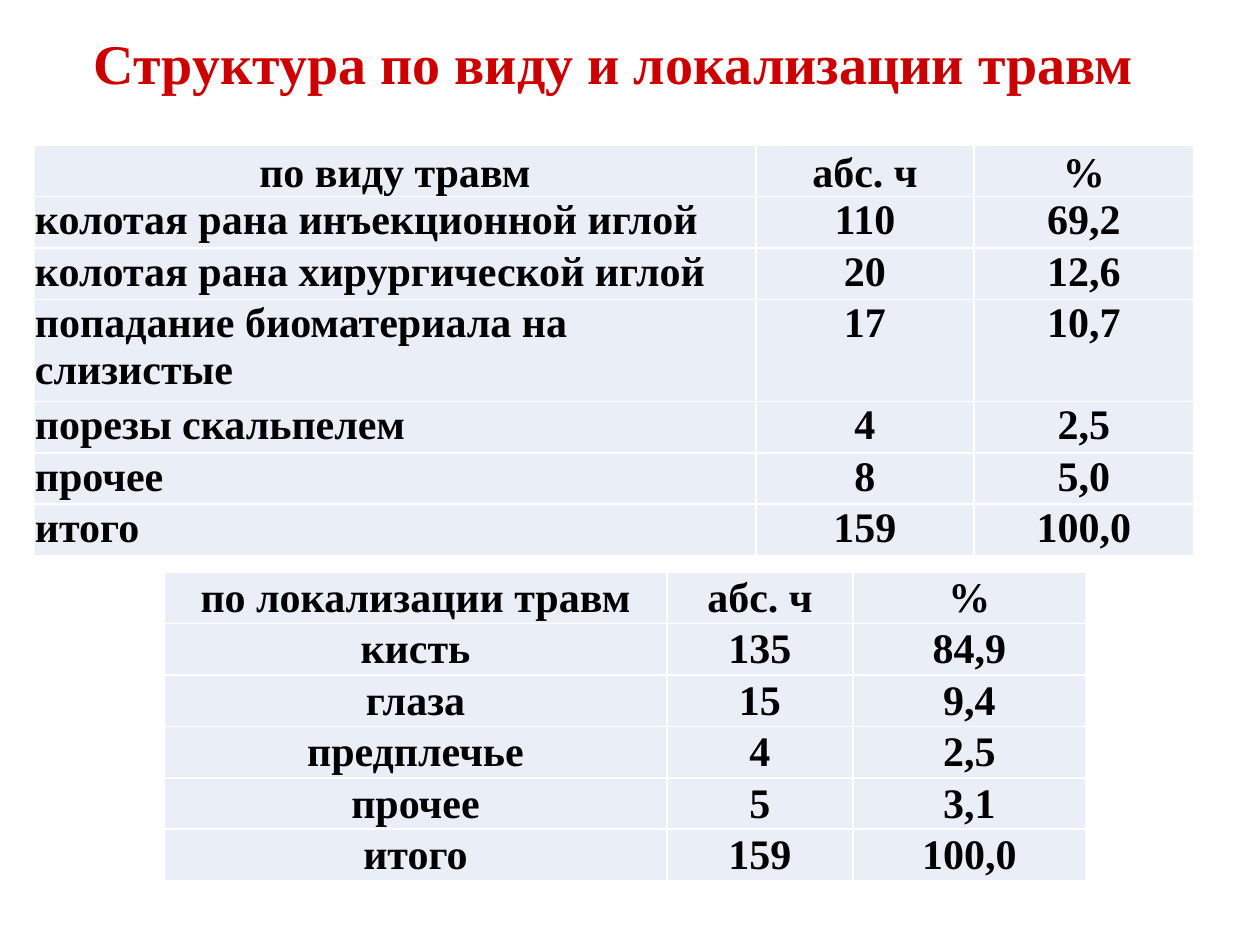
import pptx
import pptx.dml.color
import pptx.enum.text
import pptx.oxml
import pptx.oxml.ns
import pptx.util
from dataclasses import dataclass

PX = pptx.util.Inches(1) / 126
ALIGN = pptx.enum.text.PP_ALIGN
ANCHOR = pptx.enum.text.MSO_ANCHOR


@dataclass(frozen=True)
class Theme:
    font: str = "Times New Roman"
    title_size: int = 32
    table_size: int = 24
    title_color: str = "CC0000"
    text_color: str = "000000"
    cell_fill: str = "EAEFF7"
    border_color: str = "FFFFFF"
    border_width: int = 1


THEME = Theme()
ROW_HEIGHT = 51

INJURY_TYPES = [
    ("по виду травм", "абс. ч", "%"),
    ("колотая рана инъекционной иглой", "110", "69,2"),
    ("колотая рана хирургической иглой", "20", "12,6"),
    ("попадание биоматериала на слизистые", "17", "10,7"),
    ("порезы скальпелем", "4", "2,5"),
    ("прочее", "8", "5,0"),
    ("итого", "159", "100,0"),
]
INJURY_SITES = [
    ("по локализации травм", "абс. ч", "%"),
    ("кисть", "135", "84,9"),
    ("глаза", "15", "9,4"),
    ("предплечье", "4", "2,5"),
    ("прочее", "5", "3,1"),
    ("итого", "159", "100,0"),
]


def px(length):
    return pptx.util.Emu(round(length * PX))


def rgb(value):
    return pptx.dml.color.RGBColor.from_string(value)


def write_text(text_frame, text, size, color, alignment):
    paragraph = text_frame.paragraphs[0]
    paragraph.text = text
    paragraph.alignment = alignment
    paragraph.font.name = THEME.font
    paragraph.font.size = pptx.util.Pt(size)
    paragraph.font.bold = True
    paragraph.font.color.rgb = rgb(color)
    return paragraph


def add_title(slide, text, left, top, width, height):
    shape = slide.shapes.add_textbox(px(left), px(top), px(width), px(height))
    text_frame = shape.text_frame
    text_frame.word_wrap = True
    text_frame.vertical_anchor = ANCHOR.MIDDLE
    paragraph = write_text(text_frame, text, THEME.title_size, THEME.title_color, ALIGN.CENTER)
    paragraph.line_spacing = 0.9


def add_borders(cell):
    """Must run before the fill is set, as the schema puts borders first."""
    properties = cell._tc.get_or_add_tcPr()
    for side in ("lnL", "lnR", "lnT", "lnB"):
        properties.append(pptx.oxml.parse_xml(
            f'<a:{side} {pptx.oxml.ns.nsdecls("a")} w="{pptx.util.Pt(THEME.border_width)}">'
            f'<a:solidFill><a:srgbClr val="{THEME.border_color}"/></a:solidFill></a:{side}>'))


def format_cell(cell, text, alignment, anchor):
    add_borders(cell)
    cell.fill.solid()
    cell.fill.fore_color.rgb = rgb(THEME.cell_fill)
    cell.margin_left = cell.margin_right = cell.margin_top = px(1)
    cell.margin_bottom = 0
    cell.vertical_anchor = anchor
    write_text(cell.text_frame, text, THEME.table_size, THEME.text_color, alignment)


def add_table(slide, rows, left, top, column_widths, label_alignments, header_anchor,
              body_anchor, double_rows=()):
    heights = [ROW_HEIGHT * (2 if index in double_rows else 1) for index in range(len(rows))]
    table = slide.shapes.add_table(len(rows), len(column_widths), px(left), px(top),
                                   px(sum(column_widths)), px(sum(heights))).table
    table.first_row = False
    table.horz_banding = False
    for column, width in zip(table.columns, column_widths):
        column.width = px(width)
    for row_index, (values, height) in enumerate(zip(rows, heights)):
        table.rows[row_index].height = px(height)
        anchor = body_anchor if row_index else header_anchor
        for column_index, text in enumerate(values):
            alignment = ALIGN.CENTER if column_index else label_alignments[row_index]
            format_cell(table.cell(row_index, column_index), text, alignment, anchor)


def main():
    presentation = pptx.Presentation()
    presentation.slide_width = px(1260)
    presentation.slide_height = px(945)
    slide = presentation.slides.add_slide(presentation.slide_layouts[6])

    add_title(slide, "Структура по виду и локализации травм", 34, 16, 1160, 100)

    wrapped_row = 3
    type_alignments = [ALIGN.CENTER] + [ALIGN.JUSTIFY] * (len(INJURY_TYPES) - 1)
    type_alignments[wrapped_row] = ALIGN.LEFT
    add_table(slide, INJURY_TYPES, 34, 145, (722, 218, 220), type_alignments,
              ANCHOR.BOTTOM, ANCHOR.TOP, double_rows=(wrapped_row,))
    add_table(slide, INJURY_SITES, 164, 572, (503, 186, 233),
              [ALIGN.CENTER] * len(INJURY_SITES), ANCHOR.MIDDLE, ANCHOR.MIDDLE)

    presentation.save("out.pptx")


if __name__ == "__main__":
    main()
